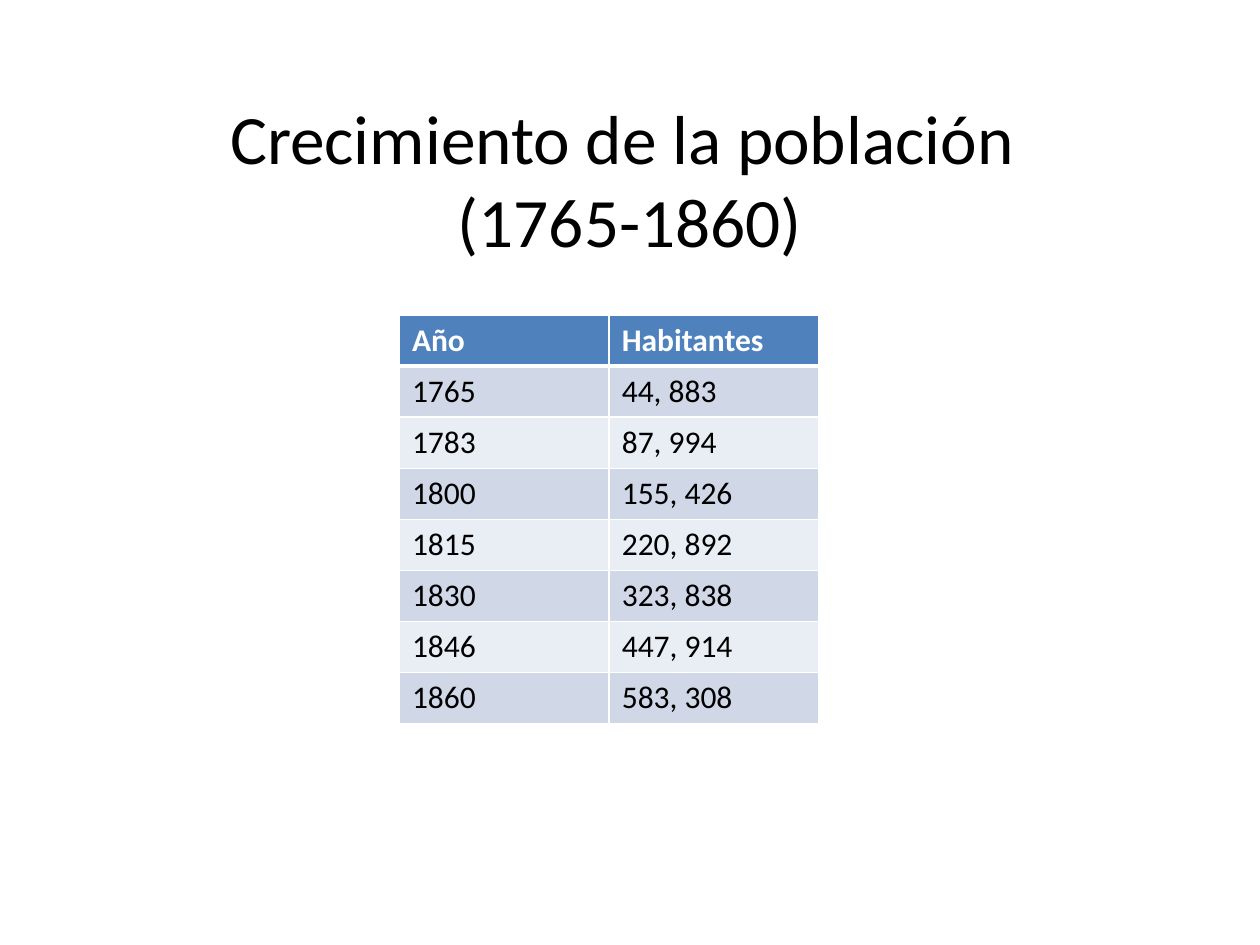
from lxml import etree
from pptx import Presentation
from pptx import util as u
from pptx.dml.color import RGBColor
from pptx.enum import text
from pptx.oxml.ns import qn

HEADER = ("Año", "Habitantes")
POPULATION = [
    ("1765", "44, 883"),
    ("1783", "87, 994"),
    ("1800", "155, 426"),
    ("1815", "220, 892"),
    ("1830", "323, 838"),
    ("1846", "447, 914"),
    ("1860", "583, 308"),
]
HEADER_FILL = "4F81BD"
BAND_FILLS = ("D0D8E8", "E9EDF4")


def color(value):
    return RGBColor.from_string(value)


def write(tf, content, size=18, fill="000000", bold=False,
          align=text.PP_ALIGN.LEFT):
    p = tf.paragraphs[0]
    p.text = content
    p.alignment = align
    for font in [p.font] + [r.font for r in p.runs]:
        font.name = "Calibri"
        font.size = u.Pt(size)
        font.bold = bold
        font.color.rgb = color(fill)


def set_borders(cell, bottom=1):
    """Draw white cell borders; they must precede the fill in the XML."""
    tc_pr = cell._tc.get_or_add_tcPr()
    for i, (side, width) in enumerate(
            [("lnL", 1), ("lnR", 1), ("lnT", 1), ("lnB", bottom)]):
        ln = etree.Element(qn(f"a:{side}"), w=str(u.Pt(width)))
        fill = etree.SubElement(ln, qn("a:solidFill"))
        etree.SubElement(fill, qn("a:srgbClr"), val="FFFFFF")
        tc_pr.insert(i, ln)


def add_title(slide, content):
    box = slide.shapes.add_textbox(
        u.Inches(0.5), u.Inches(0.75), u.Inches(9), u.Inches(1.33))
    tf = box.text_frame
    tf.word_wrap = True
    tf.vertical_anchor = text.MSO_ANCHOR.MIDDLE
    write(tf, content, size=39.6, align=text.PP_ALIGN.CENTER)


def add_population_table(slide):
    rows = [HEADER] + POPULATION
    row_height = u.Inches(0.405)
    table = slide.shapes.add_table(
        len(rows), len(HEADER), u.Inches(3.17), u.Inches(2.5),
        u.Inches(3.33), row_height * len(rows)).table
    for i, values in enumerate(rows):
        table.rows[i].height = row_height
        is_header = i == 0
        for j, value in enumerate(values):
            cell = table.cell(i, j)
            cell.fill.solid()
            cell.fill.fore_color.rgb = color(
                HEADER_FILL if is_header else BAND_FILLS[(i - 1) % 2])
            set_borders(cell, bottom=3 if is_header else 1)
            write(cell.text_frame, value, bold=is_header,
                  fill="FFFFFF" if is_header else "000000")


def main():
    prs = Presentation()
    prs.slide_width, prs.slide_height = u.Inches(10), u.Inches(7.5)
    slide = prs.slides.add_slide(prs.slide_layouts[6])
    add_population_table(slide)
    add_title(slide, "Crecimiento de la población \v(1765-1860)")
    prs.save("out.pptx")


if __name__ == "__main__":
    main()
